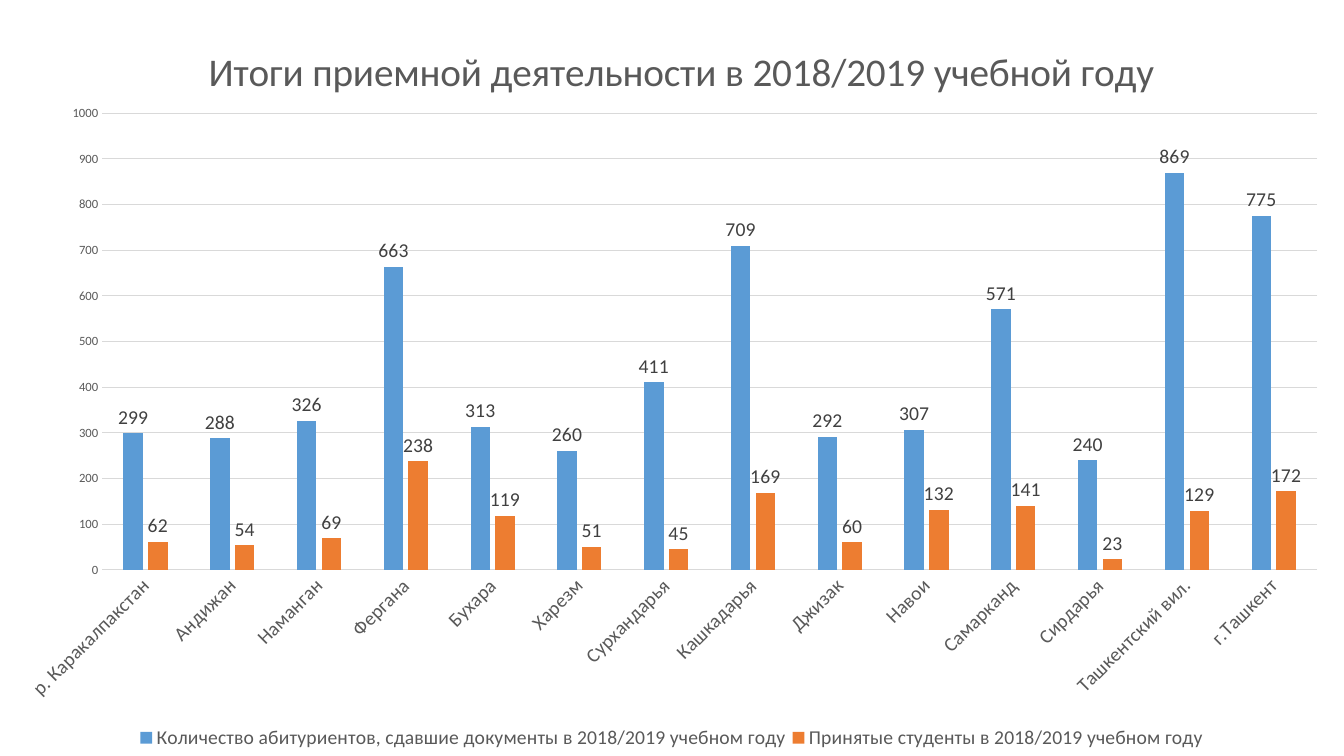
from lxml import etree
from pptx import Presentation
from pptx import util as u
from pptx.chart.data import CategoryChartData
from pptx.dml.color import RGBColor
from pptx.enum import chart as ch
from pptx.oxml.ns import qn

EMU_PER_PX = 9525
WIDTH, HEIGHT = 1280, 720
FONT = "Calibri"
COLORS = {
    "applicants": "5B9BD5",
    "admitted": "ED7D31",
    "text": "595959",
    "label": "404040",
    "line": "D9D9D9",
}
TITLE = "Итоги приемной деятельности в 2018/2019 учебной году"
APPLICANTS = "Количество абитуриентов, сдавшие документы в 2018/2019 учебном году"
ADMITTED = "Принятые студенты в 2018/2019 учебном году"
REGIONS = [
    ("р. Каракалпакстан", 299, 62),
    ("Андижан", 288, 54),
    ("Наманган", 326, 69),
    ("Фергана", 663, 238),
    ("Бухара", 313, 119),
    ("Харезм", 260, 51),
    ("Сурхандарья", 411, 45),
    ("Кашкадарья", 709, 169),
    ("Джизак", 292, 60),
    ("Навои", 307, 132),
    ("Самарканд", 571, 141),
    ("Сирдарья", 240, 23),
    ("Ташкентский вил.", 869, 129),
    ("г.Ташкент", 775, 172),
]


def px(value):
    return u.Emu(value * EMU_PER_PX)


def color(name):
    return RGBColor.from_string(COLORS[name])


def style_font(font, size, color_name="text"):
    font.name = FONT
    font.size = u.Pt(size)
    font.bold = False
    font.color.rgb = color(color_name)


def style_line(line):
    line.color.rgb = color("line")
    line.width = u.Pt(0.75)


def place(element, index, inner=False, **fractions):
    """Give a chart part a manual layout, as fractions of the chart, at a child index."""
    for old in element.findall(qn("c:layout")):
        element.remove(old)
    layout = etree.Element(qn("c:layout"))
    manual = etree.SubElement(layout, qn("c:manualLayout"))
    if inner:
        etree.SubElement(manual, qn("c:layoutTarget"), val="inner")
    for side in "xy":
        etree.SubElement(manual, qn(f"c:{side}Mode"), val="edge")
    for side, fraction in fractions.items():
        etree.SubElement(manual, qn(f"c:{side}"), val=str(fraction))
    element.insert(index, layout)


def add_column_chart(slide):
    data = CategoryChartData()
    names, applicants, admitted = zip(*REGIONS)
    data.categories = names
    data.add_series(APPLICANTS, applicants)
    data.add_series(ADMITTED, admitted)
    frame = slide.shapes.add_chart(
        ch.XL_CHART_TYPE.COLUMN_CLUSTERED, 0, 0, px(WIDTH), px(HEIGHT), data)
    chart = frame.chart
    chart.font.name = FONT
    chart.font.size = u.Pt(10)
    return chart


def style_title(chart):
    chart.has_title = True
    title = chart.chart_title
    title.text_frame.text = TITLE
    style_font(title.text_frame.paragraphs[0].runs[0].font, 28)
    title.include_in_layout = False


def style_legend(chart):
    chart.has_legend = True
    chart.legend.position = ch.XL_LEGEND_POSITION.BOTTOM
    chart.legend.include_in_layout = False
    style_font(chart.legend.font, 14)


def style_axes(chart):
    for axis, size in ((chart.category_axis, 14), (chart.value_axis, 9)):
        axis.major_tick_mark = axis.minor_tick_mark = ch.XL_TICK_MARK.NONE
        style_font(axis.tick_labels.font, size)
    style_line(chart.category_axis.format.line)
    chart.category_axis._element.find(f".//{qn('a:bodyPr')}").set("rot", "-2700000")
    values = chart.value_axis
    values.minimum_scale, values.maximum_scale, values.major_unit = 0, 1000, 100
    values.format.line.fill.background()
    style_line(values.major_gridlines.format.line)


def style_columns(plot):
    plot.gap_width, plot.overlap = 219, -27
    plot.vary_by_categories = False
    for series, name in zip(plot.series, ("applicants", "admitted")):
        series.format.fill.solid()
        series.format.fill.fore_color.rgb = color(name)
        labels = series.data_labels
        labels.show_value = True
        labels.position = ch.XL_LABEL_POSITION.OUTSIDE_END
        style_font(labels.font, 14, "label")


def main():
    presentation = Presentation()
    presentation.slide_width, presentation.slide_height = px(WIDTH), px(HEIGHT)
    slide = presentation.slides.add_slide(presentation.slide_layouts[6])
    chart = add_column_chart(slide)
    style_title(chart)
    style_legend(chart)
    style_axes(chart)
    style_columns(chart.plots[0])
    body = chart._chartSpace.chart
    place(body.find(qn("c:title")), 1, x=0.15, y=0.05)
    place(body.find(qn("c:legend")), 1, x=0.1, y=0.96, w=0.8, h=0.04)
    place(body.find(qn("c:plotArea")), 0, inner=True, x=0.076, y=0.15, w=0.904, h=0.604)
    presentation.save("out.pptx")


if __name__ == "__main__":
    main()
